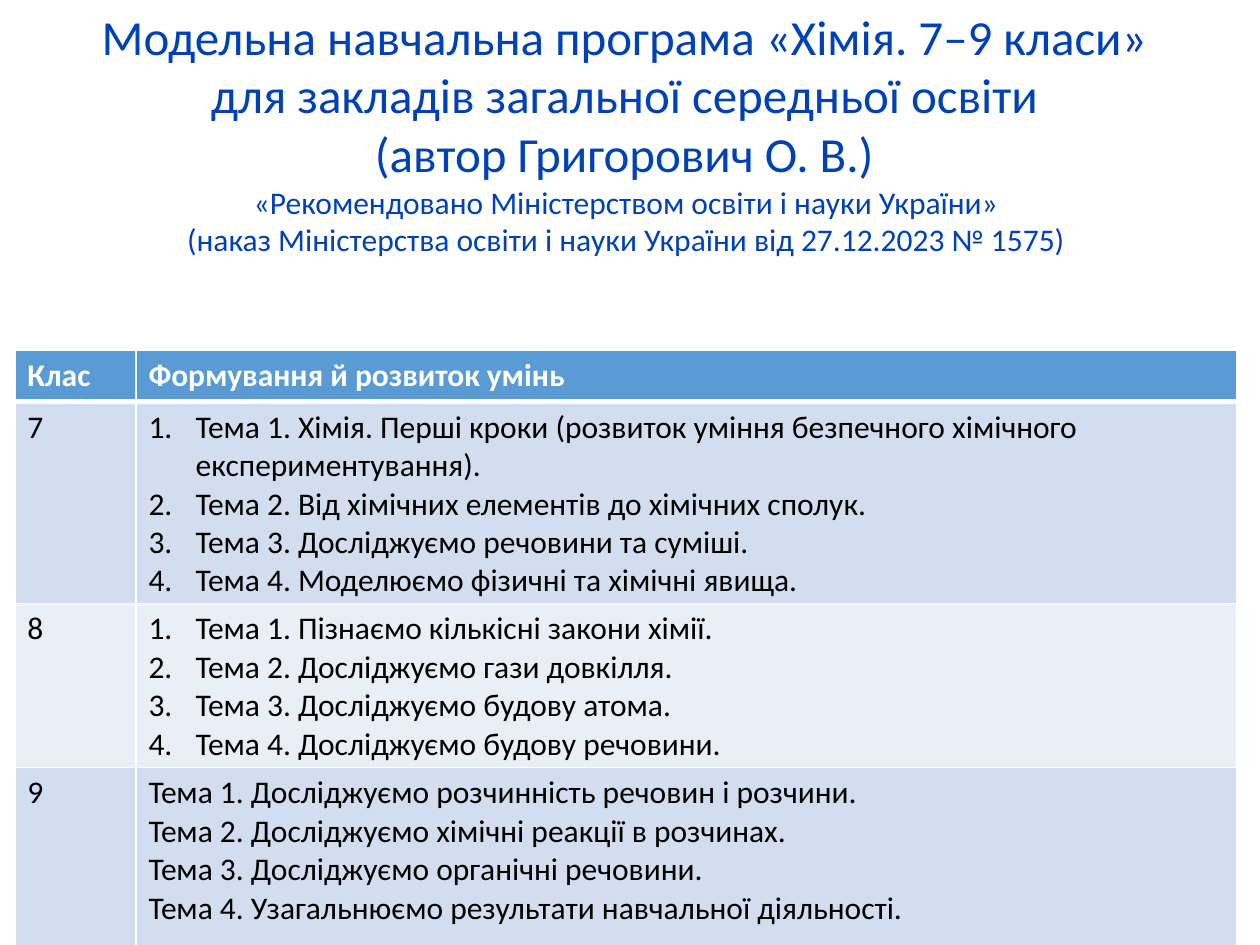
from dataclasses import dataclass

from lxml import etree
from pptx import Presentation
from pptx.dml.color import RGBColor
from pptx.enum.text import MSO_AUTO_SIZE, PP_ALIGN
from pptx.oxml.ns import qn
from pptx.util import Cm, Pt

CENTER = PP_ALIGN.CENTER
LEFT = PP_ALIGN.LEFT
FIT_SHAPE = MSO_AUTO_SIZE.SHAPE_TO_FIT_TEXT


@dataclass(frozen=True)
class Theme:
    font: str = "Calibri"
    title_size: int = 28
    body_size: int = 18
    title: str = "0041B6"
    text: str = "000000"
    white: str = "FFFFFF"
    header: str = "5B9BD5"
    bands: tuple[str, str] = ("D2DEEF", "EAEFF7")
    border: float = 1
    header_border: float = 3


@dataclass(frozen=True)
class Grade:
    name: str
    topics: tuple[str, ...]
    height: float
    numbered: bool = True


THEME = Theme()
TITLE_LINES = (
    "Модельна навчальна програма «Хімія. 7–9 класи» ",
    "для закладів загальної середньої освіти ",
    "(автор Григорович О. В.) ",
)
APPROVAL_LINES = (
    "«Рекомендовано Міністерством освіти і науки України» ",
    "(наказ Міністерства освіти і науки України від 27.12.2023 № 1575) ",
)
HEADER = ("Клас", "Формування й розвиток умінь")
HEADER_HEIGHT = 1.04
COLUMN_WIDTHS = (2.44, 22.2)
GRADES = (
    Grade("7", (
        "Тема 1. Хімія. Перші кроки (розвиток уміння безпечного хімічного експериментування).",
        "Тема 2. Від хімічних елементів до хімічних сполук.",
        "Тема 3. Досліджуємо речовини та суміші.",
        "Тема 4. Моделюємо фізичні та хімічні явища.",
    ), 4.06),
    Grade("8", (
        "Тема 1. Пізнаємо кількісні закони хімії.",
        "Тема 2. Досліджуємо гази довкілля.",
        "Тема 3. Досліджуємо будову атома.",
        "Тема 4. Досліджуємо будову речовини.",
    ), 3.31),
    Grade("9", (
        "Тема 1. Досліджуємо розчинність речовин і розчини.",
        "Тема 2. Досліджуємо хімічні реакції в розчинах.",
        "Тема 3. Досліджуємо органічні речовини.",
        "Тема 4. Узагальнюємо результати навчальної діяльності.",
    ), 4.06, numbered=False),
)


def write_paragraph(frame, text: str, *, size: float = THEME.body_size,
                    color: str = THEME.text, bold: bool = False,
                    align=LEFT, numbered: bool = False) -> None:
    paragraph = frame.paragraphs[0]
    if paragraph.runs:
        paragraph = frame.add_paragraph()
    paragraph.alignment = align
    if numbered:
        properties = paragraph._p.get_or_add_pPr()
        properties.set("marL", str(Cm(0.95)))
        properties.set("indent", str(-Cm(0.95)))
        etree.SubElement(properties, qn("a:buFont"), typeface="+mj-lt")
        etree.SubElement(properties, qn("a:buAutoNum"), type="arabicPeriod")
    run = paragraph.add_run()
    run.text = text
    run.font.name = THEME.font
    run.font.size = Pt(size)
    run.font.bold = bold
    run.font.color.rgb = RGBColor.from_string(color)


def style_cell(cell, fill: str, top: float = THEME.border,
               bottom: float = THEME.border) -> None:
    properties = cell._tc.get_or_add_tcPr()
    widths = {"L": THEME.border, "R": THEME.border, "T": top, "B": bottom}
    for side, width in widths.items():
        line = etree.SubElement(properties, qn(f"a:ln{side}"), w=str(Pt(width)))
        solid = etree.SubElement(line, qn("a:solidFill"))
        etree.SubElement(solid, qn("a:srgbClr"), val=THEME.white)
    cell.fill.solid()
    cell.fill.fore_color.rgb = RGBColor.from_string(fill)


def add_title(slide) -> None:
    shape = slide.shapes.add_textbox(Cm(0.48), Cm(0), Cm(24.43), Cm(5.38))
    frame = shape.text_frame
    frame.word_wrap = True
    frame.auto_size = FIT_SHAPE
    for lines, size in ((TITLE_LINES, THEME.title_size),
                        (APPROVAL_LINES, THEME.body_size)):
        for line in lines:
            write_paragraph(frame, line, size=size, color=THEME.title, align=CENTER)


def add_program_table(slide) -> None:
    heights = [HEADER_HEIGHT, *(grade.height for grade in GRADES)]
    table = slide.shapes.add_table(
        len(heights), len(COLUMN_WIDTHS), Cm(0.3), Cm(7.06),
        Cm(sum(COLUMN_WIDTHS)), Cm(sum(heights))).table
    for column, width in zip(table.columns, COLUMN_WIDTHS):
        column.width = Cm(width)
    for row, height in zip(table.rows, heights):
        row.height = Cm(height)
    for cell, text in zip(table.rows[0].cells, HEADER):
        write_paragraph(cell.text_frame, text, color=THEME.white, bold=True)
        style_cell(cell, THEME.header, bottom=THEME.header_border)
    for index, grade in enumerate(GRADES):
        name_cell, topics_cell = table.rows[index + 1].cells
        write_paragraph(name_cell.text_frame, grade.name)
        for topic in grade.topics:
            write_paragraph(topics_cell.text_frame, topic, numbered=grade.numbered)
        top = THEME.border if index else THEME.header_border
        for cell in (name_cell, topics_cell):
            style_cell(cell, THEME.bands[index % 2], top=top)


def main() -> None:
    presentation = Presentation()
    presentation.slide_width = Cm(25.4)
    presentation.slide_height = Cm(19.05)
    slide = presentation.slides.add_slide(presentation.slide_layouts[6])
    add_title(slide)
    add_program_table(slide)
    presentation.save("out.pptx")


if __name__ == "__main__":
    main()
